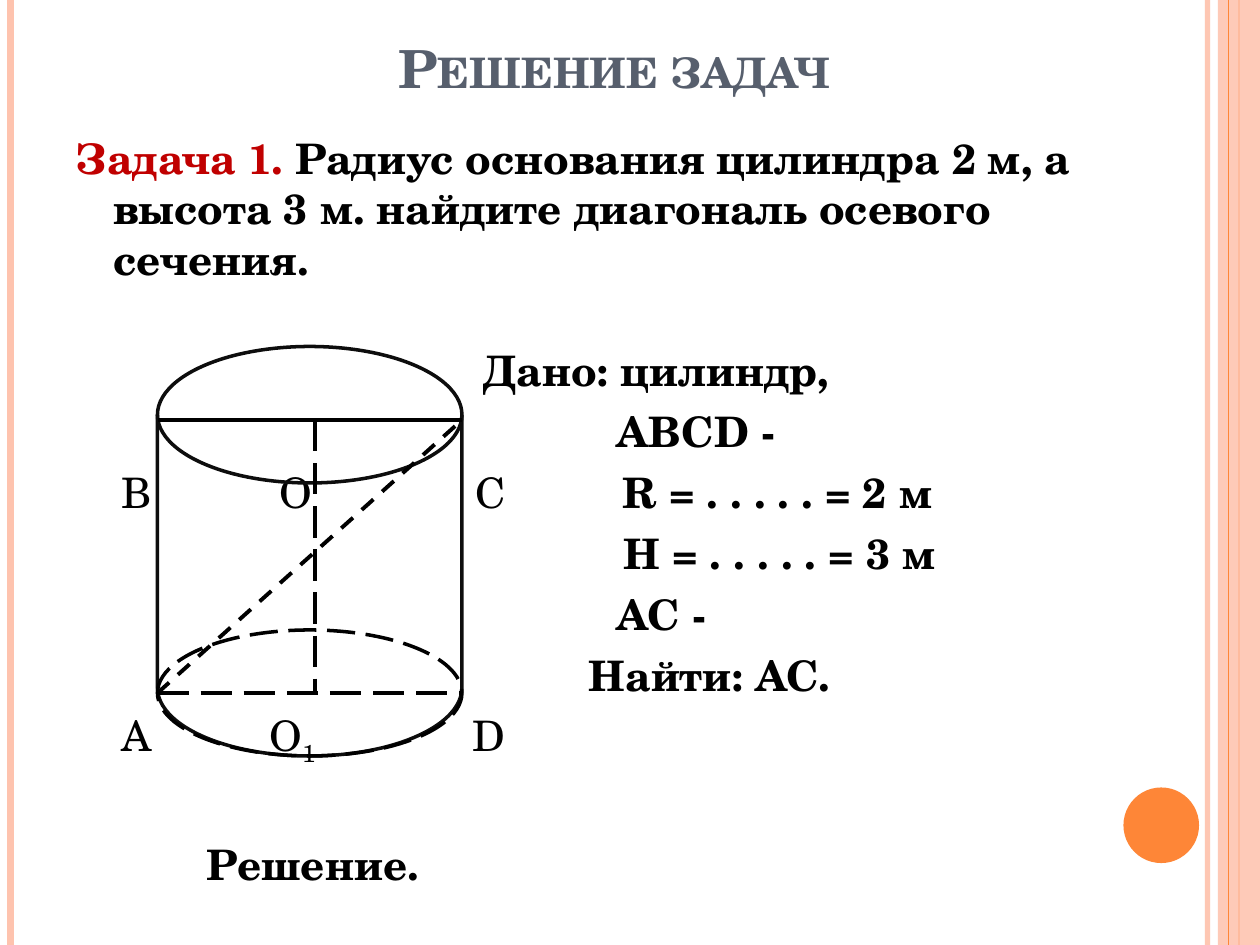
from dataclasses import dataclass

from lxml import etree
from pptx import Presentation
from pptx.dml.color import RGBColor
from pptx.enum import dml, shapes, text
from pptx.oxml import ns
from pptx.util import Pt


@dataclass(frozen=True)
class Theme:
    font: str = "TeX Gyre Schola"
    ink: str = "000000"
    outline: str = "0D0D0D"
    heading: str = "575F6D"
    task: str = "C00000"
    peach: str = "FEC3AE"
    orange: str = "FE8637"
    title_size: float = 30
    body_size: float = 24
    row_gap: float = 6
    row_pitch: float = 34.8


THEME = Theme()
DASH = dml.MSO_LINE.DASH
LONG_DASH = dml.MSO_LINE.LONG_DASH


def set_alpha(color_parent, percent):
    for color in color_parent.iter(ns.qn("a:srgbClr")):
        etree.SubElement(color, ns.qn("a:alpha"), val=str(percent * 1000))


def style_line(line, color, width, dash=None):
    line.color.rgb = RGBColor.from_string(color)
    for name, value in {"width": Pt(width), "dash_style": dash}.items():
        setattr(line, name, value)


def add_line(slide, start, end, color, width, dash=None):
    line = slide.shapes.add_connector(
        shapes.MSO_CONNECTOR.STRAIGHT, *map(Pt, (*start, *end)))
    style_line(line.line, color, width, dash)
    etree.SubElement(line._element.spPr, ns.qn("a:effectLst"))
    return line


def add_form(slide, kind, box, fill=None):
    form = slide.shapes.add_shape(kind, *map(Pt, box))
    form.shadow.inherit = False
    if fill:
        form.fill.solid()
        form.fill.fore_color.rgb = RGBColor.from_string(fill)
        form.line.fill.background()
    else:
        form.fill.background()
    return form


def add_frame(slide, box, wrap=True):
    frame = slide.shapes.add_textbox(*map(Pt, box)).text_frame
    settings = {"word_wrap": wrap, "margin_left": 0, "margin_right": 0,
                "margin_top": 0, "margin_bottom": 0}
    for name, value in settings.items():
        setattr(frame, name, value)
    return frame


def add_run(paragraph, words, color=THEME.ink, size=THEME.body_size, bold=True):
    run = paragraph.add_run()
    run.text = words
    for name, value in {"name": THEME.font, "size": Pt(size), "bold": bold}.items():
        setattr(run.font, name, value)
    run.font.color.rgb = RGBColor.from_string(color)
    return run


def set_indent(paragraph, left, first=0):
    properties = paragraph._p.get_or_add_pPr()
    for name, value in {"marL": left, "indent": first}.items():
        properties.set(name, str(int(Pt(value))))


def draw_borders(slide, box):
    left, top, width, height = box
    right, bottom = left + width, top + height

    def upright(x, color, line_width):
        return add_line(slide, (x, top), (x, bottom), color, line_width)

    inner = upright(right - 30, THEME.peach, 3)
    set_alpha(inner._element, 93)
    upright(left + 6, THEME.peach, 4.5)

    # Right strip, with its centre line behind it
    strip = add_form(slide, shapes.MSO_SHAPE.RECTANGLE,
                     (right - 24, top, 24, height), THEME.peach)
    set_alpha(strip._element, 87)
    centre = upright(right - 12, THEME.orange, 1.5)
    centre.begin_connect(strip, 0)
    centre.end_connect(strip, 2)
    strip._element.addprevious(centre._element)
    upright(right - 18, THEME.orange, 0.75)

    add_form(slide, shapes.MSO_SHAPE.OVAL,
             (right - 78, bottom - 90, 43.2, 43.2), THEME.orange)


def write_title(slide, box):
    frame = add_frame(slide, box)
    frame.vertical_anchor = text.MSO_ANCHOR.BOTTOM
    frame.margin_bottom = Pt(3.6)
    heading = frame.paragraphs[0]
    heading.alignment = text.PP_ALIGN.CENTER
    run = add_run(heading, "Решение задач", THEME.heading, THEME.title_size)
    run.font._element.set("cap", "small")


def write_problem(slide, box):
    problem = add_frame(slide, box).paragraphs[0]
    set_indent(problem, 21.6, -21.6)
    add_run(problem, "Задача 1. ", THEME.task)
    add_run(problem, "Радиус основания цилиндра 2 м, а высота 3 м. "
                     "найдите диагональ осевого сечения.")


def write_given(slide, box):
    rows = [("Дано: цилиндр,", 0), ("АВСD -", 76), ("R = . . . . . = 2 м", 79.5),
            ("H = . . . . . = 3 м", 80), ("АС -", 76), ("Найти: АС.", 60)]
    frame = add_frame(slide, box)
    for index, (words, indent) in enumerate(rows):
        row = frame.add_paragraph() if index else frame.paragraphs[0]
        row.space_before = Pt(THEME.row_gap if index else 0)
        set_indent(row, indent)
        add_run(row, words)


def draw_cylinder(slide, box):
    left, top, width, height = box
    right, bottom = left + width, top + height
    middle, upper, lower = left + 90, top + 42, bottom - 36

    body = add_form(slide, shapes.MSO_SHAPE.FLOWCHART_MAGNETIC_DISK, box)
    style_line(body.line, THEME.outline, 2)

    # Axis, diameters and diagonal of the axial section
    section = [((middle, upper), (middle, lower), LONG_DASH),
               ((left, upper), (right, upper), None),
               ((left, lower), (right, lower), LONG_DASH),
               ((left, lower), (right, upper), DASH)]
    for start, end, dash in section:
        add_line(slide, start, end, THEME.ink, 2.25, dash)

    base = add_form(slide, shapes.MSO_SHAPE.OVAL, (left, bottom - 72, width, 72))
    style_line(base.line, THEME.ink, 2, LONG_DASH)


def write_vertices(slide, box):
    left, top, width, height = box
    upper_row, lower_row = top, top + height
    vertices = [("В", "", 0, upper_row), ("О", "", 90.5, upper_row),
                ("С", "", width, upper_row), ("А", "", 0, lower_row),
                ("О", "1", 84.5, lower_row), ("D", "", width - 2, lower_row)]
    for letter, index, offset, y in vertices:
        label = add_frame(slide, (left + offset, y, 30, 29), wrap=False).paragraphs[0]
        add_run(label, letter, bold=False)
        if index:
            subscript = add_run(label, index, bold=False)
            subscript.font._element.set("baseline", "-25000")


def write_solution(slide, box):
    add_run(add_frame(slide, box).paragraphs[0], "Решение.")


def main():
    deck = Presentation()
    deck.slide_width, deck.slide_height = Pt(720), Pt(540)
    slide = deck.slides.add_slide(deck.slide_layouts[6])
    given_top = 196.8

    draw_borders(slide, (0, 0, 720, 540))
    write_title(slide, (36, 0, 630, 60))
    write_problem(slide, (43.2, 75.6, 573.6, 87))
    write_given(slide, (276.5, given_top, 340, 203))
    write_vertices(slide, (69.5, given_top + 2 * THEME.row_pitch,
                           202.5, 4 * THEME.row_pitch))
    write_solution(slide, (118.3, 479.3, 200, 29))
    draw_cylinder(slide, (90, 198, 174, 234))

    deck.save("out.pptx")


if __name__ == "__main__":
    main()
